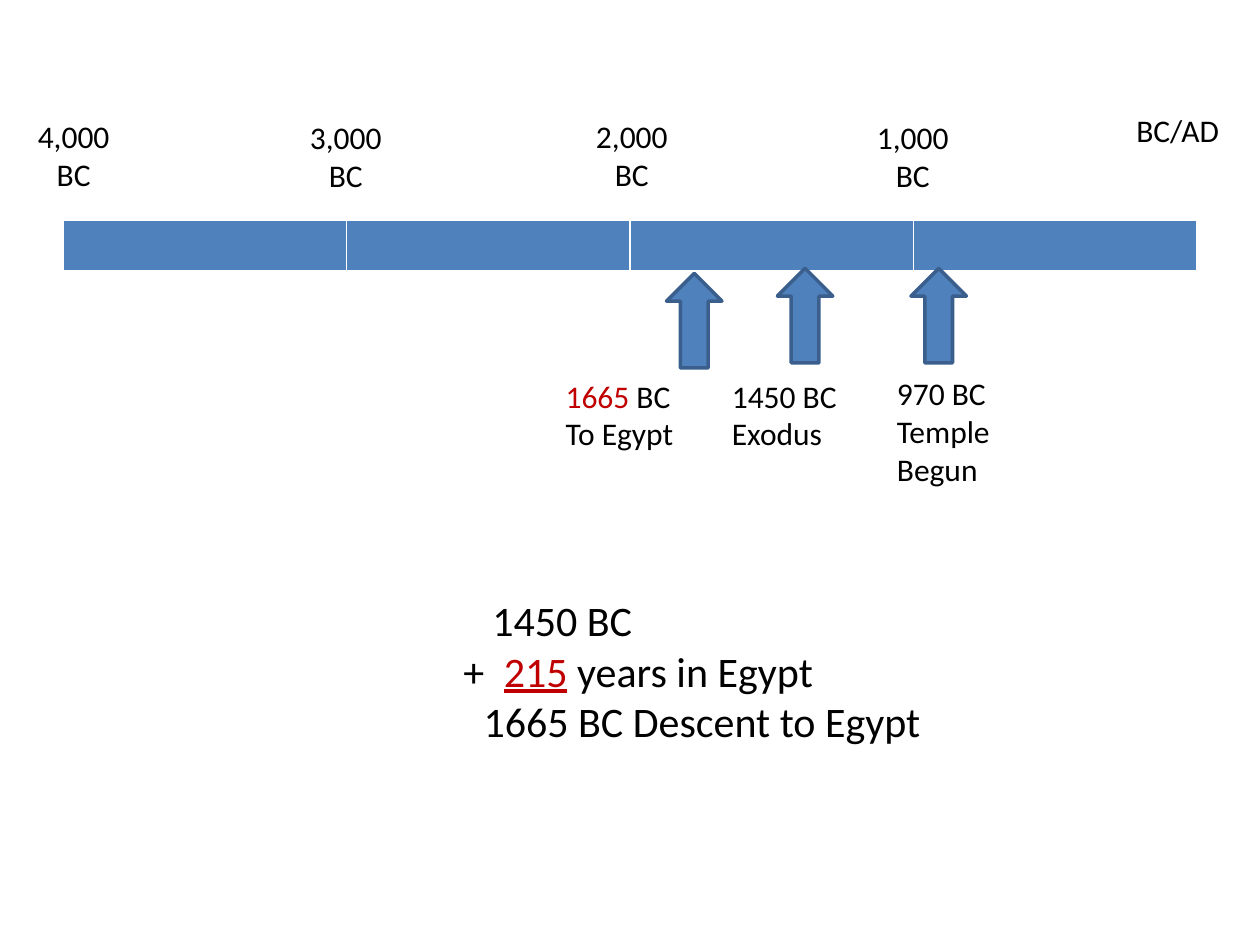
from lxml import etree
from pptx import Presentation
from pptx.dml.color import RGBColor
from pptx.enum.shapes import MSO_SHAPE
from pptx.enum.text import MSO_AUTO_SIZE, PP_ALIGN
from pptx.oxml.ns import qn
from pptx.util import Inches, Pt

BLACK, RED, BLUE, DARK_BLUE, WHITE = "000000", "C00000", "4F81BD", "3A5F8C", "FFFFFF"

# Each line of text is a list of (text, colour, underlined) runs.
MILLENNIA = [("4,000", 0.17, 0.88), ("3,000", 2.33, 0.89),
             ("2,000", 4.6, 0.88), ("1,000", 6.83, 0.89)]
EVENTS = [
    ([[("1665", RED, False), (" BC", BLACK, False)], "To Egypt"], (4.39, 2.94, 1.25, 0.71)),
    (["1450 BC", "Exodus"], (5.71, 2.94, 1.08, 0.71)),
    (["970 BC", "Temple", "Begun"], (7.02, 2.92, 1.25, 1.01)),
]
ARROWS = [(5.29, 2.17), (6.17, 2.13), (7.23, 2.13)]
SUM_LINES = [
    "1450 BC",
    [("+\t", BLACK, False), ("215", RED, True), (" years in Egypt", BLACK, False)],
    "1665 BC Descent to Egypt",
]
SUM_INDENTS = [0.23, 0, 0.16]
SUM_TAB = 0.32
BAR = (0.5, 1.75, 9, 0.41)
BAR_PARTS = 4
BORDERS = {"a:lnL": 1, "a:lnR": 1, "a:lnT": 1, "a:lnB": 3}


def colour(value):
    return RGBColor.from_string(value)


def add_text(slide, lines, box, size=18, align=PP_ALIGN.LEFT, indents=None, tab=None):
    shape = slide.shapes.add_textbox(*map(Inches, box))
    frame = shape.text_frame
    frame.word_wrap = True
    frame.auto_size = MSO_AUTO_SIZE.SHAPE_TO_FIT_TEXT
    for index, line in enumerate(lines):
        paragraph = frame.paragraphs[0] if index == 0 else frame.add_paragraph()
        paragraph.alignment = align
        properties = paragraph._p.get_or_add_pPr()
        if indents:
            properties.set("marL", str(Inches(indents[index])))
        if tab and "\t" in line[0][0]:
            tabs = etree.SubElement(properties, qn("a:tabLst"))
            etree.SubElement(tabs, qn("a:tab"), pos=str(Inches(tab)), algn="l")
        runs = [(line, BLACK, False)] if isinstance(line, str) else line
        for text, run_colour, underlined in runs:
            run = paragraph.add_run()
            run.text = text
            run.font.name = "Calibri"
            run.font.size = Pt(size)
            run.font.color.rgb = colour(run_colour)
            if underlined:
                run.font.underline = True


def set_borders(cell):
    properties = cell._tc.get_or_add_tcPr()
    for position, (tag, width) in enumerate(BORDERS.items()):
        line = etree.Element(qn(tag), w=str(Pt(width)))
        fill = etree.SubElement(line, qn("a:solidFill"))
        etree.SubElement(fill, qn("a:srgbClr"), val=WHITE)
        properties.insert(position, line)


def add_bar(slide):
    table = slide.shapes.add_table(1, BAR_PARTS, *map(Inches, BAR)).table
    for column in table.columns:
        column.width = Inches(BAR[2] / BAR_PARTS)
    for cell in table.iter_cells():
        cell.fill.solid()
        cell.fill.fore_color.rgb = colour(BLUE)
        set_borders(cell)


def add_arrow(slide, left, top):
    arrow = slide.shapes.add_shape(
        MSO_SHAPE.UP_ARROW, Inches(left), Inches(top), Inches(0.44), Inches(0.75))
    arrow.shadow.inherit = False
    arrow.fill.solid()
    arrow.fill.fore_color.rgb = colour(BLUE)
    arrow.line.color.rgb = colour(DARK_BLUE)
    arrow.line.width = Pt(2)


def main():
    presentation = Presentation()
    presentation.slide_width, presentation.slide_height = Inches(10), Inches(7.5)
    slide = presentation.slides.add_slide(presentation.slide_layouts[6])
    add_bar(slide)
    for year, left, top in MILLENNIA:
        add_text(slide, [year, "BC"], (left, top, 0.83, 0.71), align=PP_ALIGN.CENTER)
    add_text(slide, ["BC/AD"], (8.92, 0.83, 0.92, 0.4))
    for left, top in ARROWS:
        add_arrow(slide, left, top)
    for lines, box in EVENTS:
        add_text(slide, lines, box)
    add_text(slide, SUM_LINES, (3.58, 4.67, 4.53, 1.31), size=24,
             indents=SUM_INDENTS, tab=SUM_TAB)
    presentation.save("out.pptx")


if __name__ == "__main__":
    main()
